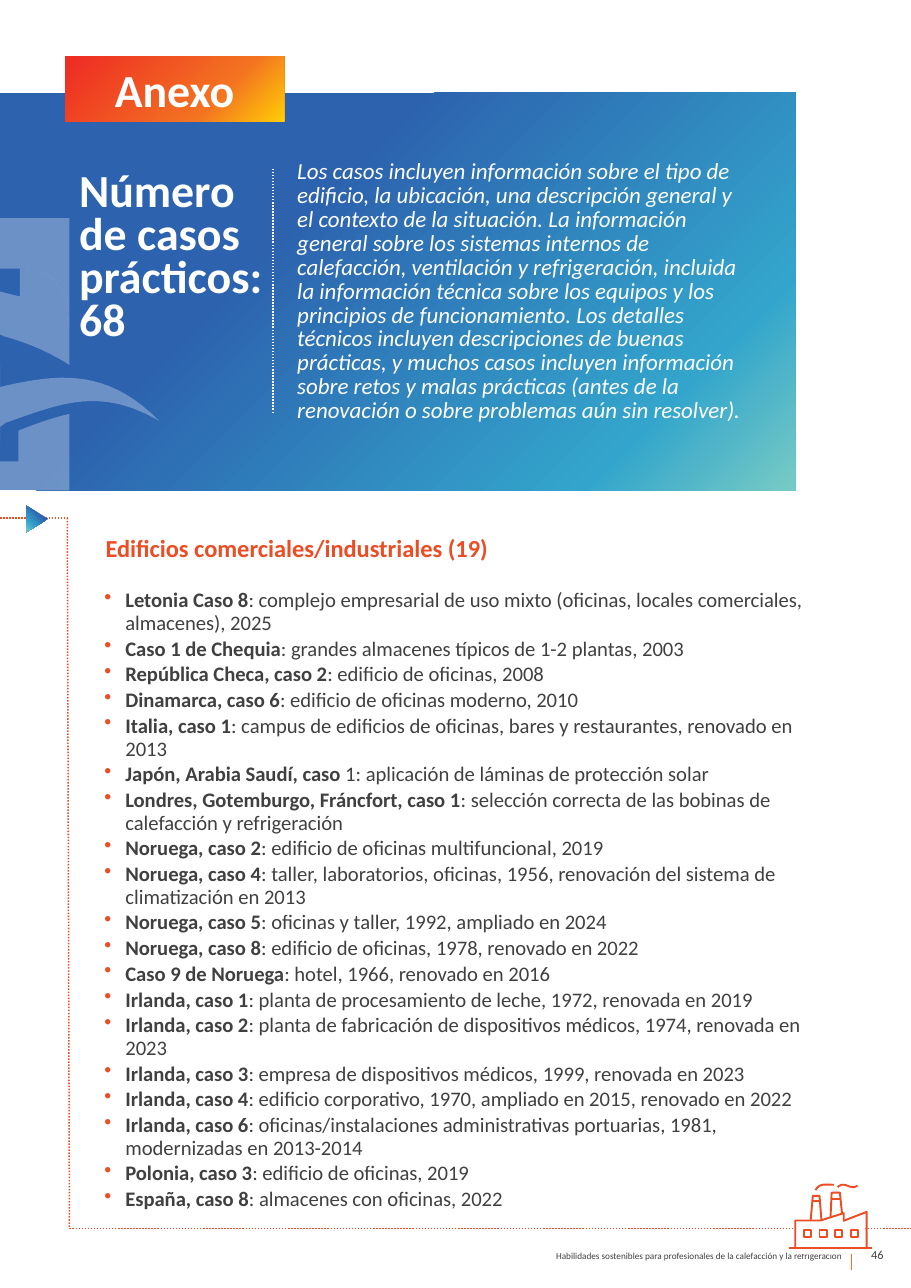
from dataclasses import dataclass
from lxml.etree import SubElement
from pptx import Presentation
from pptx.dml.color import RGBColor
from pptx.enum.dml import MSO_LINE
from pptx.enum.shapes import MSO_CONNECTOR, MSO_SHAPE
from pptx.enum.text import MSO_ANCHOR, PP_ALIGN
from pptx.oxml.ns import qn
from pptx.util import Pt


@dataclass(frozen=True)
class Theme:
    font: str = "Calibri"
    white: str = "FFFFFF"
    gray: str = "404040"
    red: str = "ED4D24"
    rule: str = "F37321"
    warm: tuple = ((3, "EE2D24"), (68, "F37321"), (100, "FFCD05"))
    cool: tuple = ((35, "2D62AE"), (82, "33A5CC"), (100, "77CBC4"))
    arrow: tuple = ((35, "2D62AE"), (74, "33A5CC"), (100, "77CBC4"))
    title: float = 30
    head: float = 16
    intro: float = 15
    body: float = 13.5
    page: float = 8
    foot: float = 6


T = Theme()

CASES = [
    ("Letonia Caso 8", ": complejo empresarial de uso mixto (oficinas, locales comerciales, almacenes), 2025"),
    ("Caso 1 de Chequia", ": grandes almacenes típicos de 1-2 plantas, 2003"),
    ("República Checa, caso 2", ": edificio de oficinas, 2008"),
    ("Dinamarca, caso 6", ": edificio de oficinas moderno, 2010"),
    ("Italia, caso 1", ": campus de edificios de oficinas, bares y restaurantes, renovado en 2013"),
    ("Japón, Arabia Saudí, caso", " 1: aplicación de láminas de protección solar"),
    ("Londres, Gotemburgo, Fráncfort, caso 1", ": selección correcta de las bobinas de calefacción y refrigeración"),
    ("Noruega, caso 2", ": edificio de oficinas multifuncional, 2019"),
    ("Noruega, caso 4", ": taller, laboratorios, oficinas, 1956, renovación del sistema de climatización en 2013"),
    ("Noruega, caso 5", ": oficinas y taller, 1992, ampliado en 2024"),
    ("Noruega, caso 8", ": edificio de oficinas, 1978, renovado en 2022"),
    ("Caso 9 de Noruega", ": hotel, 1966, renovado en 2016"),
    ("Irlanda, caso 1", ": planta de procesamiento de leche, 1972, renovada en 2019"),
    ("Irlanda, caso 2", ": planta de fabricación de dispositivos médicos, 1974, renovada en 2023"),
    ("Irlanda, caso 3", ": empresa de dispositivos médicos, 1999, renovada en 2023"),
    ("Irlanda, caso 4", ": edificio corporativo, 1970, ampliado en 2015, renovado en 2022"),
    ("Irlanda, caso 6", ": oficinas/instalaciones administrativas portuarias, 1981, modernizadas en 2013-2014"),
    ("Polonia, caso 3", ": edificio de oficinas, 2019"),
    ("España, caso 8", ": almacenes con oficinas, 2022"),
]
INTRO = (
    "Los casos incluyen información sobre el tipo de edificio, la ubicación, una descripción general y "
    "el contexto de la situación. La información general sobre los sistemas internos de calefacción, "
    "ventilación y refrigeración, incluida la información técnica sobre los equipos y los principios de "
    "funcionamiento. Los detalles técnicos incluyen descripciones de buenas prácticas, y muchos casos "
    "incluyen información sobre retos y malas prácticas (antes de la renovación o sobre problemas aún sin resolver)."
)


def rgb(code):
    return RGBColor.from_string(code)


def blend(shape, stops):
    """Fill with a gradient that runs down to the right."""
    shape.fill.gradient()
    shape.fill.gradient_angle = 315
    track = shape._element.spPr.find(qn("a:gradFill")).find(qn("a:gsLst"))
    for old in list(track):
        track.remove(old)
    for pos, code in stops:
        stop = SubElement(track, qn("a:gs"), pos=str(pos * 1000))
        SubElement(stop, qn("a:srgbClr"), val=code)


def block(sl, kind, box, fill):
    shape = sl.shapes.add_shape(kind, *map(Pt, box))
    shape.shadow.inherit = False
    shape.line.fill.background()
    if isinstance(fill, str):
        shape.fill.solid()
        shape.fill.fore_color.rgb = rgb(fill)
    else:
        blend(shape, fill)
    return shape


def rule(sl, start, end, code, width=1, dots=True):
    line = sl.shapes.add_connector(MSO_CONNECTOR.STRAIGHT, *map(Pt, start + end))
    SubElement(line._element.spPr, qn("a:effectLst"))
    line.line.color.rgb = rgb(code)
    line.line.width = Pt(width)
    if dots:
        line.line.dash_style = MSO_LINE.ROUND_DOT


def write(par, words, size, code, bold=False, slant=False):
    run = par.add_run()
    run.text = words
    font = run.font
    font.name, font.size, font.bold, font.italic = T.font, Pt(size), bold, slant
    font.color.rgb = rgb(code)


def frame(sl, box):
    text = sl.shapes.add_textbox(*map(Pt, box)).text_frame
    text.word_wrap = True
    return text


def trace(points, steps=24):
    """Turn (x, y) corners and six-number Bézier curves into a list of points."""
    path = []
    for item in points:
        if len(item) == 2:
            path.append(item)
            continue
        ends = (path[-1], item[:2], item[2:4], item[4:])
        for n in range(1, steps + 1):
            t = n / steps
            parts = ((1 - t) ** 3, 3 * t * (1 - t) ** 2, 3 * t * t * (1 - t), t ** 3)
            path.append(tuple(sum(k * p[i] for k, p in zip(parts, ends)) for i in (0, 1)))
    return path


def outline(sl, x, y, rings):
    """Draw (points, closed) rings in one shape, kept inside the left page edge."""
    pen = None
    for points, closed in rings:
        path = [(Pt(max(x + px, 0)), Pt(y + py)) for px, py in trace(points)]
        if pen is None:
            pen = sl.shapes.build_freeform(*path[0])
        else:
            pen.move_to(*path[0])
        pen.add_line_segments(path[1:], close=closed)
    shape = pen.convert_to_shape()
    shape.shadow.inherit = False
    return shape


def waves(sl, x, y):
    bend = (34.6, 115, 44.6, 127.4, 45.4, 152.6)
    forms = [
        [(12, 133), (-105, 105, -133, 184, -205, 142), (-162, 186.5, -122, 167, -71, 156),
         (-27, 148, 16, 159, 45.4, 178), (45.4, 152.6), (44.6, 127.4, 34.6, 115, 13, 115), (13, 133)],
        [(0, 115), (13, 115), bend, (45.4, 82), (0, 82)],
        [(-114, 222.5), (3, 250.5, 31, 172, 104, 214.5), (60, 170, 20, 189, -31, 199.5),
         (-74, 209, -118, 197, -147, 178)],
        [(12, 241), (0, 241), (0, 260), (45.4, 260), (45.4, 210), (32.4, 213, 21, 217.4, 12, 221)],
    ]
    for form in forms:
        shape = outline(sl, x, y, [(form, True)])
        shape.line.fill.background()
        shape.fill.solid()
        shape.fill.fore_color.rgb = rgb(T.white)
        tint = shape._element.spPr.find(qn("a:solidFill")).find(qn("a:srgbClr"))
        SubElement(tint, qn("a:alpha"), val="30000")


def banner(sl, box):
    x, y, w, h = box
    block(sl, MSO_SHAPE.RECTANGLE, box, T.cool)
    # Case count
    par = frame(sl, (x + 44.6, y + 49.7, 147.6, 128)).paragraphs[0]
    par.line_spacing = Pt(28)
    write(par, "Número de casos prácticos: 68", T.title, T.white, bold=True)
    # Annex tag
    tag = block(sl, MSO_SHAPE.RECTANGLE, (x + 42.5, y - 23.8, 143.3, 42.5), T.warm).text_frame
    tag.vertical_anchor = MSO_ANCHOR.MIDDLE
    par = tag.paragraphs[0]
    par.alignment = PP_ALIGN.CENTER
    write(par, "Anexo", T.title, T.white, bold=True)
    waves(sl, x, y)
    # Introduction and its divider
    par = frame(sl, (x + 187.2, y + 41, 310.3, 128)).paragraphs[0]
    par.line_spacing = Pt(15.6)
    write(par, INTRO, T.intro, T.white, slant=True)
    rule(sl, (x + 178.6, y + 49.7), (x + 178.6, y + 210.2), T.white)


def border(sl, box):
    x, y, w, h = box
    stops = [(x, y), (x + 44, y), (x + 45.4, y + h), (x + w, y + h)]
    for start, end in zip(stops, stops[1:]):
        rule(sl, start, end, T.red)
    arrow = block(sl, MSO_SHAPE.ISOSCELES_TRIANGLE, (x + 15.8, y - 6.5, 17.3, 14.4), T.arrow)
    arrow.rotation = 90


def cases(sl, box):
    x, y, w, h = box
    par = frame(sl, (x + 0.7, y, 341, 27.4)).paragraphs[0]
    write(par, "Edificios comerciales/industriales (19)", T.head, T.red, bold=True)
    # Bulleted list
    text = frame(sl, (x, y + 36.7, w, h - 36.7))
    for n, (place, note) in enumerate(CASES):
        par = text.add_paragraph() if n else text.paragraphs[0]
        props = par._p.get_or_add_pPr()
        props.set("marL", str(Pt(13.7)))
        props.set("indent", str(-Pt(13.7)))
        SubElement(SubElement(props, qn("a:buClr")), qn("a:srgbClr"), val=T.red)
        SubElement(props, qn("a:buChar"), char="•")
        par.line_spacing = Pt(14.8)
        par.space_after = Pt(2)
        write(par, place, T.body, T.gray, bold=True)
        write(par, note, T.body, T.gray)


def plant(sl, box):
    x, y, w, h = box
    block(sl, MSO_SHAPE.RECTANGLE, (x + 4.3, y + 14.4, 45.4, 31.7), T.white)
    rings = [
        ([(0, 42.2), (w, 42.2)], False),
        ([(4.3, 42.2), (4.3, 24.3), (20.9, 24.3), (36, 19.5), (36, 24.5), (51, 18.7), (51, 42.2)], False),
        # Chimneys and their bands
        ([(14.4, 24), (15.8, 8.2), (20.2, 8.2), (21.4, 24)], False),
        ([(15.5, 11.7), (20.5, 11.7)], False),
        ([(27.4, 22), (28.1, 6.1), (33.5, 6.1), (34.9, 19.8)], False),
        ([(27.9, 10.4), (33.9, 10.4)], False),
        # Smoke
        ([(17.6, 4.5), (20, 0, 24, 0.8, 29.5, 1)], False),
        ([(32, 2.5), (37, -2, 40, 5, 45, 1.5)], False),
    ]
    side = 4.6
    for n in range(4):
        a, b = 9.9 + 10.3 * n, 30.3
        rings.append(([(a, b), (a + side, b), (a + side, b + side), (a, b + side)], True))
    shape = outline(sl, x, y, rings)
    shape.fill.background()
    shape.line.color.rgb = rgb(T.red)
    shape.line.width = Pt(1.25)


def footer(sl, box):
    x, y, w, h = box
    par = frame(sl, (x, y + 4.3, 383, 14.4)).paragraphs[0]
    par.alignment = PP_ALIGN.RIGHT
    write(par, "Habilidades sostenibles para profesionales de la calefacción y la refrigeración", T.foot, T.gray)
    rule(sl, (x + 382.3, y + 20.9), (x + 382.3, y + 3.6), T.rule, 0.75, dots=False)
    # Page number
    text = frame(sl, (x + 383, y, w - 383, h))
    text.vertical_anchor = MSO_ANCHOR.MIDDLE
    par = text.paragraphs[0]
    par.alignment = PP_ALIGN.RIGHT
    write(par, "46", T.page, T.gray)


def main():
    deck = Presentation()
    deck.slide_width, deck.slide_height = Pt(595.44), Pt(841.68)
    sl = deck.slides.add_slide(deck.slide_layouts[6])
    footer(sl, (174.2, 809.3, 410.4, 21.6))
    banner(sl, (0, 60.5, 520, 260))
    border(sl, (0, 338.4, 595.44, 464.4))
    cases(sl, (61.2, 344.9, 492.5, 415.4))
    plant(sl, (515.5, 773.3, 54.7, 42.5))
    deck.save("out.pptx")


if __name__ == "__main__":
    main()
